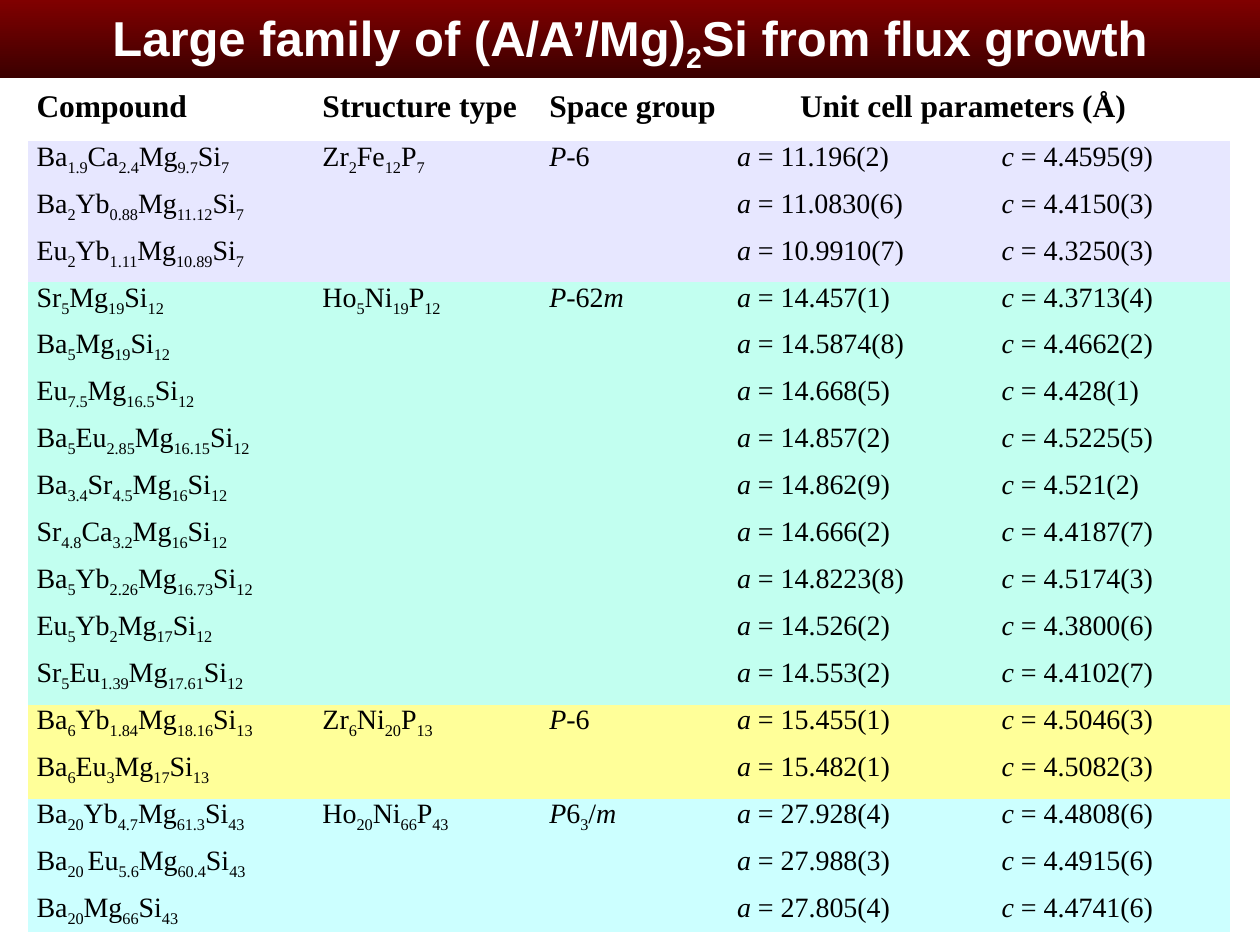
import pptx
import pptx.util
import pptx.dml.color
import pptx.enum.shapes
import pptx.enum.text
from lxml import etree

Inches = pptx.util.Inches
Pt = pptx.util.Pt
RGB = pptx.dml.color.RGBColor.from_string
ALIGN = pptx.enum.text.PP_ALIGN

COLORS = {
    "band top": "800000", "band bottom": "3B0000", "title": "FFFFFF", "text": "000000",
    "lilac": "E7E7FF", "mint": "C2FFF0", "yellow": "FFFF99", "sky": "CCFFFF",
}
NO_STYLE = "{2D5ABB26-0587-4C30-8999-92F81FD0307C}"


def write(frame, text, size=16, font="Times New Roman", color="text", bold=False,
          align=ALIGN.JUSTIFY, after=10, indent=0, tab=None):
    """Write one paragraph; _x_ marks a subscript and *x* marks italics."""
    paragraph = frame.paragraphs[0]
    paragraph.alignment = align
    paragraph.space_after = Pt(after)
    properties = paragraph._p.get_or_add_pPr()
    if indent:
        properties.set("marL", str(Inches(indent)))
        properties.set("indent", "0")
    if tab:
        stops = etree.SubElement(properties, pptx.oxml.ns.qn("a:tabLst"))
        etree.SubElement(stops, pptx.oxml.ns.qn("a:tab"), pos=str(Inches(tab)), algn="l")
    for level, part in enumerate(text.split("_")):
        for slant, piece in enumerate(part.split("*")):
            if not piece:
                continue
            run = paragraph.add_run()
            run.text = piece
            run.font.size = Pt(size)
            run.font.name = font
            run.font.bold = bold
            run.font.italic = slant % 2 == 1
            run.font.color.rgb = RGB(COLORS[color])
            if level % 2:
                run.font._element.set("baseline", "-25000")


prs = pptx.Presentation()
prs.slide_width, prs.slide_height = Inches(10), Inches(7.5)
slide = prs.slides.add_slide(prs.slide_layouts[5])

# Title band, placed behind the title
band = slide.shapes.add_shape(pptx.enum.shapes.MSO_SHAPE.RECTANGLE,
                              0, 0, Inches(10), Inches(0.62))
band.shadow.inherit = False
band.line.fill.background()
band.fill.gradient()
band.fill.gradient_angle = 270
for stop, shade in zip(band.fill.gradient_stops, ("band top", "band bottom")):
    stop.color.rgb = RGB(COLORS[shade])
slide.shapes._spTree.insert(2, band._element)

# Title
title = slide.shapes.title
title.left, title.top, title.width, title.height = (
    Inches(0.75), Inches(0), Inches(8.5), Inches(0.65))
title.text_frame.vertical_anchor = pptx.enum.text.MSO_ANCHOR.MIDDLE
title.text_frame.auto_size = pptx.enum.text.MSO_AUTO_SIZE.NONE
write(title.text_frame, "Large family of (A/A’/Mg)_2_Si from flux growth", size=28,
      font="Arial", color="title", bold=True, align=ALIGN.CENTER, after=0)

# Compounds by structure type: fill, type, space group, (formula, a, c)
headers = ["Compound", "Structure type", "Space group", "Unit cell parameters (Å)"]
families = [
    ("lilac", "Zr_2_Fe_12_P_7_", "*P*-6", [
        ("Ba_1.9_Ca_2.4_Mg_9.7_Si_7_", "11.196(2)", "4.4595(9)"),
        ("Ba_2_Yb_0.88_Mg_11.12_Si_7_", "11.0830(6)", "4.4150(3)"),
        ("Eu_2_Yb_1.11_Mg_10.89_Si_7_", "10.9910(7)", "4.3250(3)"),
    ]),
    ("mint", "Ho_5_Ni_19_P_12_", "*P*-62*m*", [
        ("Sr_5_Mg_19_Si_12_", "14.457(1)", "4.3713(4)"),
        ("Ba_5_Mg_19_Si_12_", "14.5874(8)", "4.4662(2)"),
        ("Eu_7.5_Mg_16.5_Si_12_", "14.668(5)", "4.428(1)"),
        ("Ba_5_Eu_2.85_Mg_16.15_Si_12_", "14.857(2)", "4.5225(5)"),
        ("Ba_3.4_Sr_4.5_Mg_16_Si_12_", "14.862(9)", "4.521(2)"),
        ("Sr_4.8_Ca_3.2_Mg_16_Si_12_", "14.666(2)", "4.4187(7)"),
        ("Ba_5_Yb_2.26_Mg_16.73_Si_12_", "14.8223(8)", "4.5174(3)"),
        ("Eu_5_Yb_2_Mg_17_Si_12_", "14.526(2)", "4.3800(6)"),
        ("Sr_5_Eu_1.39_Mg_17.61_Si_12_", "14.553(2)", "4.4102(7)"),
    ]),
    ("yellow", "Zr_6_Ni_20_P_13_", "*P*-6", [
        ("Ba_6_Yb_1.84_Mg_18.16_Si_13_", "15.455(1)", "4.5046(3)"),
        ("Ba_6_Eu_3_Mg_17_Si_13_", "15.482(1)", "4.5082(3)"),
    ]),
    ("sky", "Ho_20_Ni_66_P_43_", "*P*6_3_/*m*", [
        ("Ba_20_Yb_4.7_Mg_61.3_Si_43_", "27.928(4)", "4.4808(6)"),
        ("Ba_20 _Eu_5.6_Mg_60.4_Si_43_", "27.988(3)", "4.4915(6)"),
        ("Ba_20_Mg_66_Si_43_", "27.805(4)", "4.4741(6)"),
    ]),
]
rows = [(None, headers)]
for fill, structure, group, compounds in families:
    for place, (formula, a, c) in enumerate(compounds):
        first = place == 0
        rows.append((fill, [formula, structure if first else "", group if first else "",
                            f"*a* = {a}\t*c* = {c}"]))

# Table grid: header, equal rows, short last row
column_widths = [2.27, 1.8, 1.49, 3.98]
middle_rows = len(rows) - 2
row_heights = [0.41] + [5.97 / middle_rows] * middle_rows + [0.31]
table = slide.shapes.add_table(
    len(rows), len(headers), Inches(0.22), Inches(0.71),
    Inches(sum(column_widths)), Inches(sum(row_heights))).table
table.first_row = table.horz_banding = False
table._tbl.tblPr.find(pptx.oxml.ns.qn("a:tableStyleId")).text = NO_STYLE
for column, width in zip(table.columns, column_widths):
    column.width = Inches(width)

# Table contents
for r, (fill, texts) in enumerate(rows):
    table.rows[r].height = Inches(row_heights[r])
    for k, text in enumerate(texts):
        cell = table.cell(r, k)
        cell.margin_left = cell.margin_right = Inches(0.07)
        cell.margin_top = cell.margin_bottom = 0
        if fill:
            cell.fill.solid()
            cell.fill.fore_color.rgb = RGB(COLORS[fill])
        else:
            cell.fill.background()
        last = k == len(headers) - 1
        if r == 0:
            write(cell.text_frame, text, size=18, bold=True, indent=0.5 if last else 0)
        else:
            write(cell.text_frame, text, tab=2.1 if last else None)

prs.save("out.pptx")
